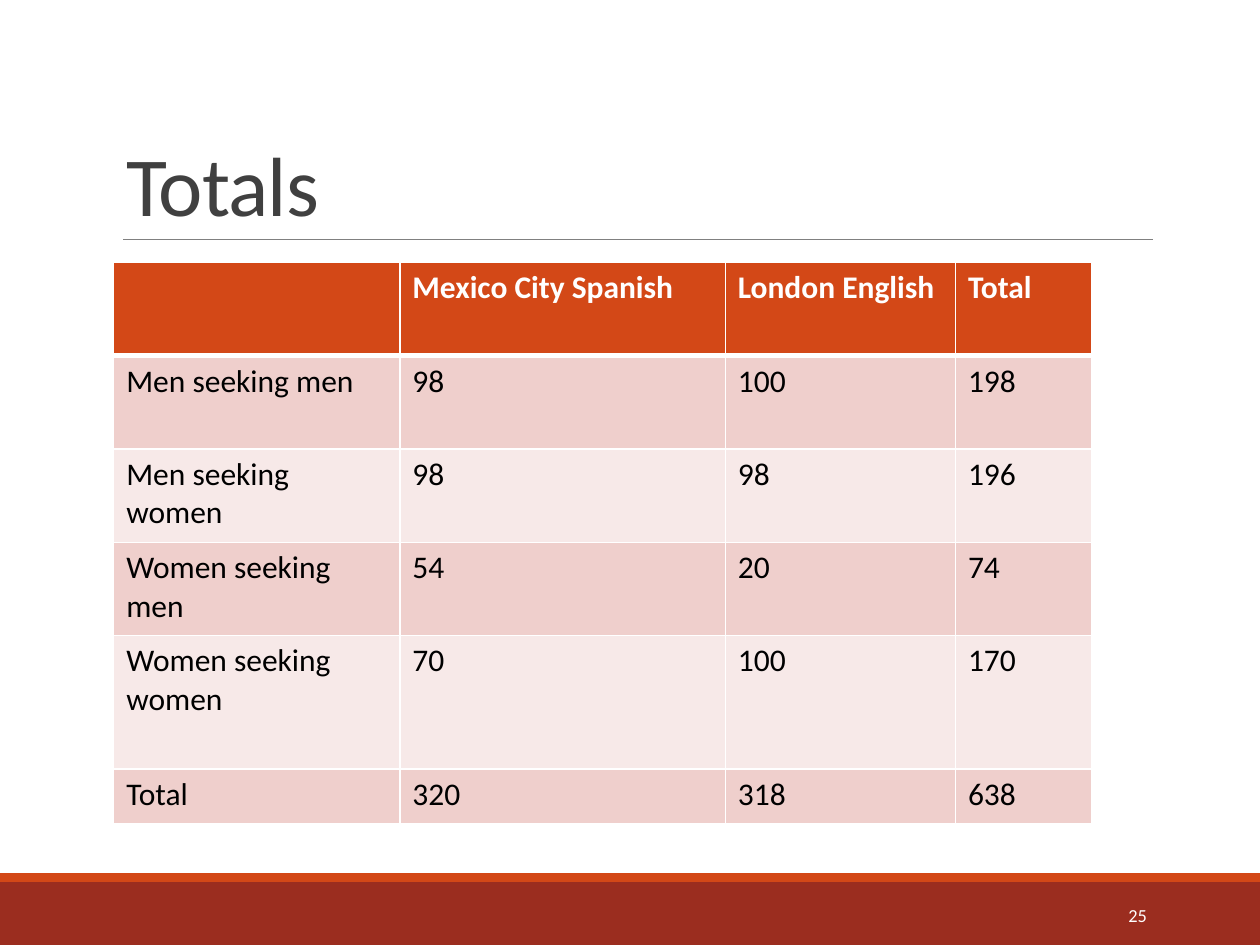
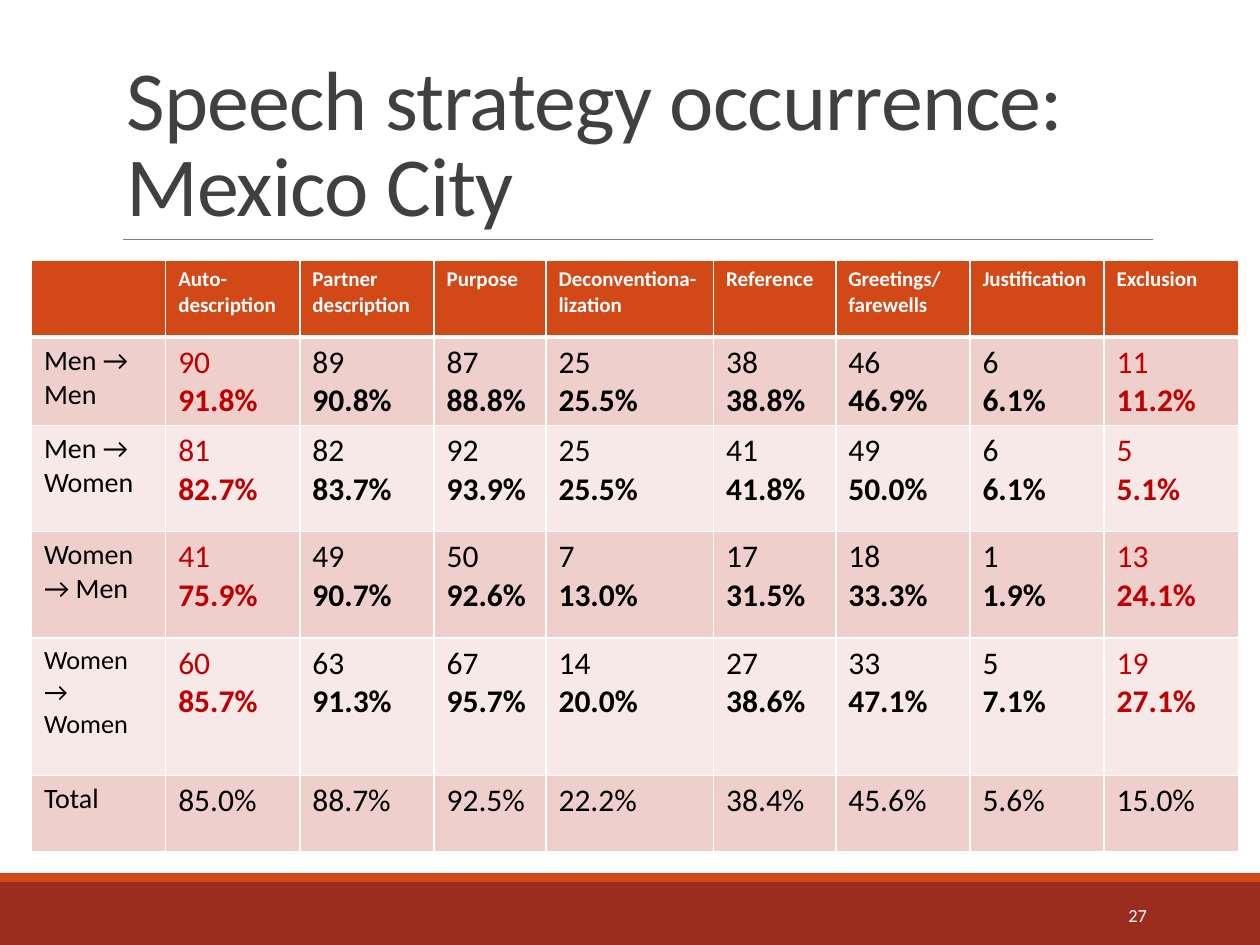
from lxml.etree import SubElement
from pptx import Presentation
from pptx.dml.color import RGBColor
from pptx.enum.shapes import MSO_CONNECTOR, MSO_SHAPE
from pptx.enum.text import MSO_ANCHOR, MSO_AUTO_SIZE, PP_ALIGN
from pptx.oxml import parse_xml
from pptx.oxml.ns import nsdecls, qn
from pptx.util import Pt

FONT = "Calibri"
ORANGE = RGBColor(0xD3, 0x48, 0x17)
BRICK = RGBColor(0x9B, 0x2D, 0x1F)
RED = RGBColor(0xC0, 0x00, 0x00)
GREY = RGBColor(0x80, 0x80, 0x80)
CHARCOAL = RGBColor(0x40, 0x40, 0x40)
BLACK = RGBColor(0x00, 0x00, 0x00)
WHITE = RGBColor(0xFF, 0xFF, 0xFF)
ROW_TINTS = (RGBColor(0xF7, 0xE9, 0xE8), RGBColor(0xEF, 0xCF, 0xCC))

SLIDE_BOX = (0, 0, 720, 540)
TITLE_BOX = (65, 22.5, 594, 114.5)
TITLE_ONLY_LAYOUT = 5

TOTALS_ROWS = [
    ["", "Mexico City Spanish", "London English", "Total"],
    ["Men seeking men", "98", "100", "198"],
    ["Men seeking women", "98", "98", "196"],
    ["Women seeking men", "54", "20", "74"],
    ["Women seeking women", "70", "100", "170"],
    ["Total", "320", "318", "638"],
]
TOTALS_COLUMNS = [163.5, 186, 131.5, 78]
TOTALS_HEIGHTS = [53.3, 53.3, 53.3, 53.3, 76.3, 31]

STRATEGY_ROWS = [
    ["", "Auto-description", "Partner description", "Purpose", "Deconventiona-lization",
     "Reference", "Greetings/ farewells", "Justification", "Exclusion"],
    ["Men → Men", "90\n91.8%", "89\n90.8%", "87\n88.8%", "25\n25.5%",
     "38\n38.8%", "46\n46.9%", "6\n6.1%", "11\n11.2%"],
    ["Men → Women", "81\n82.7%", "82\n83.7%", "92\n93.9%", "25\n25.5%",
     "41\n41.8%", "49\n50.0%", "6\n6.1%", "5\n5.1%"],
    ["Women → Men", "41\n75.9%", "49\n90.7%", "50\n92.6%", "7\n13.0%",
     "17\n31.5%", "18\n33.3%", "1\n1.9%", "13\n24.1%"],
    ["Women → Women", "60\n85.7%", "63\n91.3%", "67\n95.7%", "14\n20.0%",
     "27\n38.6%", "33\n47.1%", "5\n7.1%", "19\n27.1%"],
    ["Total", "85.0%", "88.7%", "92.5%", "22.2%", "38.4%", "45.6%", "5.6%", "15.0%"],
]
STRATEGY_COLUMNS = [76.7, 76.7, 76.7, 64, 95.8, 69.8, 76.7, 76.7, 76.7]
STRATEGY_HEIGHTS = [43.6, 47.5, 60.8, 60.8, 78.5, 43.6]
STRATEGY_LABEL_SIZES = [16, 16, 16, 16, 15, 16]
HIGHLIGHTED_COLUMNS = (1, 8)


def add_run(paragraph, text, size, color, bold=False):
    """Append one formatted run and return it."""
    run = paragraph.add_run()
    run.text = text
    run.font.name = FONT
    run.font.size = Pt(size)
    run.font.color.rgb = color
    run.font.bold = bold
    return run


def add_band(slide, left, top, width, height, color):
    """Draw a plain filled band."""
    band = slide.shapes.add_shape(
        MSO_SHAPE.RECTANGLE, Pt(left), Pt(top), Pt(width), Pt(height))
    band.shadow.inherit = False
    band.fill.solid()
    band.fill.fore_color.rgb = color
    band.line.fill.background()


def add_footer(slide, box, number):
    """Draw the bottom bands and the slide number inside the box."""
    left, top, width, height = box
    bottom = top + height
    add_band(slide, left, bottom - 36, width, 36, BRICK)
    add_band(slide, left, bottom - 41, width, 5, ORANGE)
    number_box = slide.shapes.add_textbox(
        Pt(left + width - 135.4), Pt(bottom - 31.7), Pt(77.8), Pt(28.8))
    frame = number_box.text_frame
    frame.word_wrap = True
    frame.vertical_anchor = MSO_ANCHOR.MIDDLE
    paragraph = frame.paragraphs[0]
    paragraph.alignment = PP_ALIGN.RIGHT
    add_run(paragraph, str(number), 10.5, WHITE)


def add_title(slide, box, text):
    """Fill the title placeholder and underline it along the box bottom."""
    left, top, width, height = box
    title = slide.shapes.title
    title.left, title.top, title.width, title.height = map(Pt, box)
    frame = title.text_frame
    frame.word_wrap = True
    frame.auto_size = MSO_AUTO_SIZE.NONE
    frame.vertical_anchor = MSO_ANCHOR.BOTTOM
    paragraph = frame.paragraphs[0]
    paragraph.alignment = PP_ALIGN.LEFT
    paragraph.line_spacing = 0.85
    run = add_run(paragraph, text, 48, CHARCOAL)
    run.font._element.set("spc", "-50")
    bottom = Pt(top + height)
    rule = slide.shapes.add_connector(
        MSO_CONNECTOR.STRAIGHT, Pt(left + 5.5), bottom, Pt(left + width), bottom)
    rule.line.color.rgb = GREY
    rule.line.width = Pt(0.5)
    SubElement(rule._element.spPr, qn("a:effectLst"))


def set_borders(cell, top, bottom):
    """Give a cell white borders with the given top and bottom widths."""
    properties = cell._tc.get_or_add_tcPr()
    widths = {"lnL": 1, "lnR": 1, "lnT": top, "lnB": bottom}
    for position, (side, width) in enumerate(widths.items()):
        properties.insert(position, parse_xml(
            f'<a:{side} {nsdecls("a")} w="{Pt(width)}"><a:solidFill>'
            f'<a:srgbClr val="{WHITE}"/></a:solidFill></a:{side}>'))


def add_data_table(slide, left, top, rows, columns, heights, text_style):
    """Draw a banded table whose text size and colour come from text_style."""
    table = slide.shapes.add_table(
        len(rows), len(columns), Pt(left), Pt(top),
        Pt(sum(columns)), Pt(sum(heights))).table
    for column, width in zip(table.columns, columns):
        column.width = Pt(width)
    for row_index, (row, height) in enumerate(zip(rows, heights)):
        table.rows[row_index].height = Pt(height)
        is_header = row_index == 0
        for column_index, text in enumerate(row):
            cell = table.cell(row_index, column_index)
            cell.fill.solid()
            cell.fill.fore_color.rgb = ORANGE if is_header else ROW_TINTS[row_index % 2]
            set_borders(cell, 3 if row_index == 1 else 1, 3 if is_header else 1)
            if not text:
                continue
            size, color = text_style(row_index, column_index)
            frame = cell.text_frame
            for line_index, line in enumerate(text.split("\n")):
                paragraph = frame.add_paragraph() if line_index else frame.paragraphs[0]
                add_run(paragraph, line, size, color, is_header or line_index > 0)


def totals_style(row, column):
    """Return text size and colour for a cell of the totals table."""
    return 18, BLACK if row else WHITE


def strategy_style(row, column):
    """Return text size and colour for a cell of the strategy table."""
    if row == 0:
        return 12, WHITE
    if column == 0:
        return STRATEGY_LABEL_SIZES[row], BLACK
    is_total = row == len(STRATEGY_ROWS) - 1
    return 18, RED if column in HIGHLIGHTED_COLUMNS and not is_total else BLACK


def add_table_slide(presentation, title, number, left, top, *table_parts):
    """Add a slide with a title, a table and the shared footer."""
    slide = presentation.slides.add_slide(presentation.slide_layouts[TITLE_ONLY_LAYOUT])
    add_footer(slide, SLIDE_BOX, number)
    add_title(slide, TITLE_BOX, title)
    add_data_table(slide, left, top, *table_parts)


def main():
    """Build and save the presentation."""
    presentation = Presentation()
    presentation.slide_width, presentation.slide_height = map(Pt, SLIDE_BOX[2:])
    add_table_slide(presentation, "Totals", 25, 65, 150,
                    TOTALS_ROWS, TOTALS_COLUMNS, TOTALS_HEIGHTS, totals_style)
    add_table_slide(presentation, "Speech strategy occurrence: Mexico City", 27, 18, 149,
                    STRATEGY_ROWS, STRATEGY_COLUMNS, STRATEGY_HEIGHTS, strategy_style)
    presentation.save("out.pptx")


if __name__ == "__main__":
    main()
